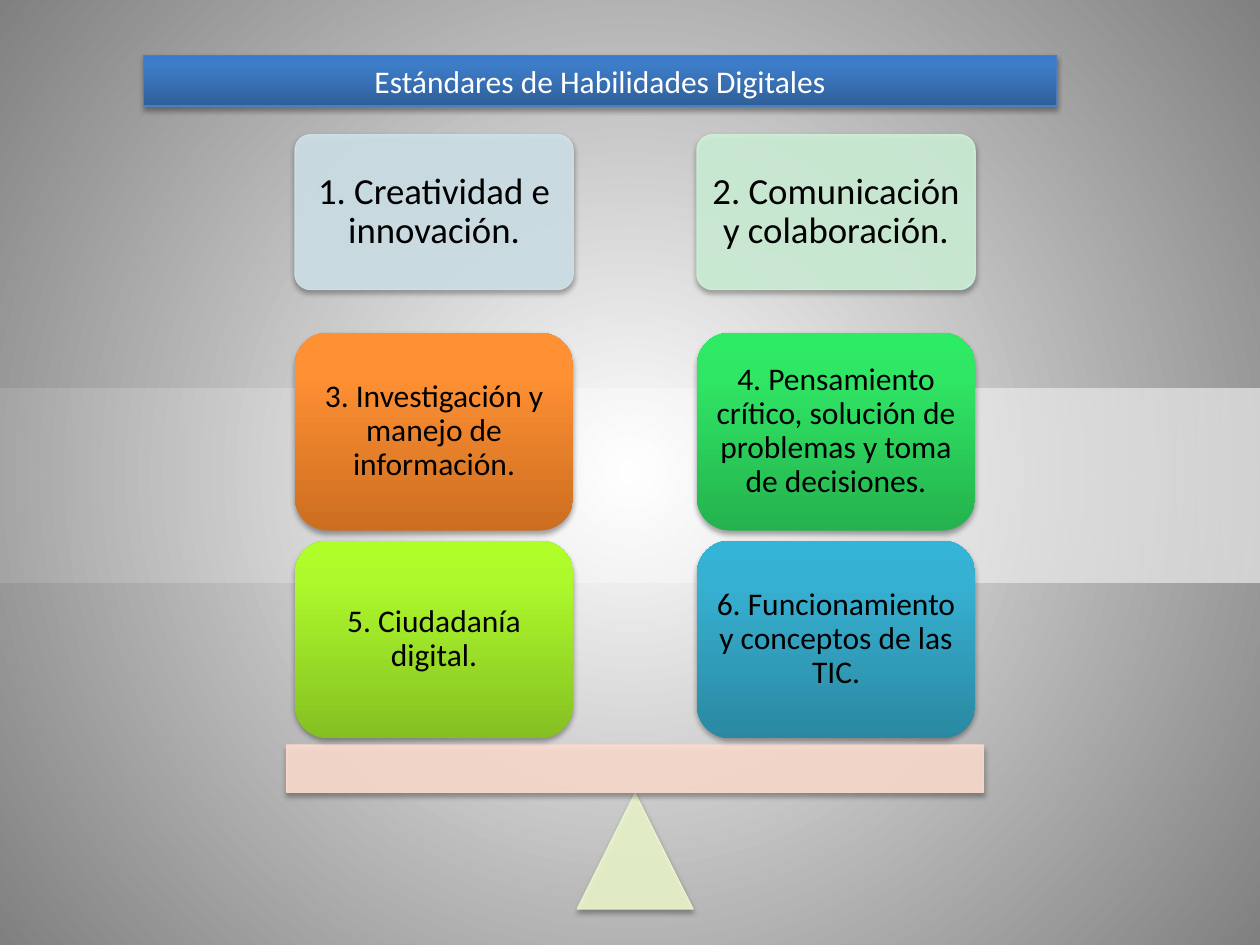
from lxml import etree
from pptx import Presentation
from pptx.dml.color import RGBColor
from pptx.enum.shapes import MSO_SHAPE
from pptx.enum.text import MSO_ANCHOR, PP_ALIGN
from pptx.oxml import parse_xml
from pptx.oxml.ns import nsdecls, qn
from pptx.util import Pt

COLORS = {
    "white": "FFFFFF", "gray": "808080", "black": "000000",
    "title_line": "4B7EBC", "board": "FCDDCF", "pivot": "EBF7CE",
}
# Gradients run from the bottom edge up: (position, colour)
GRADIENTS = {
    "title": [(0, "2F5F99"), (80, "3D7CC7"), (100, "3A7CCB")],
    "orange": [(0, "CC6E20"), (80, "FF9034"), (100, "FF9136")],
    "green": [(0, "25B24E"), (80, "30E765"), (100, "2DEB64")],
    "lime": [(0, "85C022"), (80, "ADF92C"), (100, "AFFE28")],
    "blue": [(0, "2A88A2"), (80, "37B1D2"), (100, "34B4D6")],
}
HEADS = [("1. Creatividad e innovación.", "D0E3EA"),
         ("2. Comunicación y colaboración.", "CFF1D9")]
BLOCKS = [("3. Investigación y manejo de información.", "orange"),
          ("4. Pensamiento crítico, solución de problemas y toma de decisiones.", "green"),
          ("5. Ciudadanía digital.", "lime"),
          ("6. Funcionamiento y conceptos de las TIC.", "blue")]


def gradient(stops, direction):
    """Gradient fill element; each stop is (position, colour[, opacity])."""
    grad = parse_xml(f'<a:gradFill {nsdecls("a")} rotWithShape="1"><a:gsLst/>{direction}</a:gradFill>')
    for pos, color, *opacity in stops:
        gs = etree.SubElement(grad[0], qn("a:gs"), pos=str(pos * 1000))
        clr = etree.SubElement(gs, qn("a:srgbClr"), val=color)
        if opacity:
            etree.SubElement(clr, qn("a:alpha"), val=str(opacity[0] * 1000))
    return grad


def linear(degrees):
    return f'<a:lin ang="{degrees * 60000}" scaled="0"/>'


def add_box(slide, kind, x, y, w, h):
    s = slide.shapes.add_shape(kind, Pt(x), Pt(y), Pt(w), Pt(h))
    s.shadow.inherit = False
    s.line.fill.background()
    return s


def fill_gradient(s, stops, degrees=270):
    s.fill.background()
    sp_pr = s.element.spPr
    sp_pr.replace(sp_pr.find(qn("a:noFill")), gradient(stops, linear(degrees)))


def fill_pale(s, color):
    """Fill and outline in one colour, both at 90% opacity."""
    s.fill.solid()
    s.line.fill.solid()
    s.line.width = Pt(0.75)
    for fill in (s.fill, s.line.fill):
        fill.fore_color.rgb = RGBColor.from_string(color)
    for clr in s.element.spPr.iter(qn("a:srgbClr")):
        etree.SubElement(clr, qn("a:alpha"), val="90000")


def add_shadow(s):
    s.element.spPr.find(qn("a:effectLst")).append(parse_xml(
        f'<a:outerShdw {nsdecls("a")} blurRad="{Pt(3.1)}" dist="{Pt(1.8)}" dir="5400000" rotWithShape="0">'
        f'<a:srgbClr val="{COLORS["black"]}"><a:alpha val="35000"/></a:srgbClr></a:outerShdw>'))


def write(s, text, size, color, inset=None):
    tf = s.text_frame
    tf.word_wrap = True
    p = tf.paragraphs[0]
    p.alignment = PP_ALIGN.CENTER
    if inset is None:
        tf.vertical_anchor = MSO_ANCHOR.TOP
    else:
        tf.vertical_anchor = MSO_ANCHOR.MIDDLE
        tf.margin_left = tf.margin_right = tf.margin_top = tf.margin_bottom = Pt(inset)
        p.line_spacing = 0.9
    r = p.add_run()
    r.text = text
    r.font.name = "Calibri"
    r.font.size = Pt(size)
    r.font.color.rgb = RGBColor.from_string(color)


def draw_background(slide, x, y, w, h):
    slide.background.fill.solid()
    bg = slide.element.find(".//" + qn("p:bgPr"))
    center = '<a:path path="circle"><a:fillToRect l="50000" t="50000" r="50000" b="50000"/></a:path>'
    bg.replace(bg[0], gradient([(0, COLORS["white"]), (100, COLORS["gray"])], center))
    # Translucent band
    band = add_box(slide, MSO_SHAPE.RECTANGLE, x, y, w, h)
    fill_gradient(band, [(0, COLORS["white"], 12), (100, COLORS["white"], 57)], 0)


def draw_title(slide, x, y, w, h):
    s = add_box(slide, MSO_SHAPE.RECTANGLE, x, y, w, h)
    fill_gradient(s, GRADIENTS["title"])
    s.line.color.rgb = RGBColor.from_string(COLORS["title_line"])
    s.line.width = Pt(0.75)
    add_shadow(s)
    write(s, "Estándares de Habilidades Digitales", 18, COLORS["white"])


def draw_balance(slide, x, y, w, h):
    card_w, pitch_x, pitch_y = 159, 229.7, 118.8
    left = x + (w - pitch_x - card_w) / 2

    # Pans' headings
    for col, (text, color) in enumerate(HEADS):
        s = add_box(slide, MSO_SHAPE.ROUNDED_RECTANGLE, left + col * pitch_x, y, card_w, 88.5)
        s.adjustments[0] = 0.1
        fill_pale(s, color)
        add_shadow(s)
        write(s, text, 21, COLORS["black"], 5.5)

    # Pivot and board
    side, board_h = 66.2, 27
    pivot_y = y + h - side
    for kind, color, box in (
            (MSO_SHAPE.ISOSCELES_TRIANGLE, "pivot", (x + (w - side) / 2, pivot_y, side, side)),
            (MSO_SHAPE.RECTANGLE, "board", (x, pivot_y - board_h - 0.5, w, board_h))):
        s = add_box(slide, kind, *box)
        fill_pale(s, COLORS[color])
        add_shadow(s)

    # Weights, two to a row
    for i, (text, name) in enumerate(BLOCKS):
        row, col = divmod(i, 2)
        s = add_box(slide, MSO_SHAPE.ROUNDED_RECTANGLE, left + col * pitch_x,
                    y + 113.2 + row * pitch_y, card_w, 113)
        fill_gradient(s, GRADIENTS[name])
        add_shadow(s)
        write(s, text, 18, COLORS["black"], 5)


def main():
    prs = Presentation()
    prs.slide_width, prs.slide_height = Pt(720), Pt(540)
    slide = prs.slides.add_slide(prs.slide_layouts[6])
    draw_background(slide, 0, 221.8, 720, 111)
    draw_balance(slide, 163.8, 77, 398.2, 442.4)
    draw_title(slide, 82, 31.6, 521.8, 29)
    prs.save("out.pptx")


if __name__ == "__main__":
    main()
